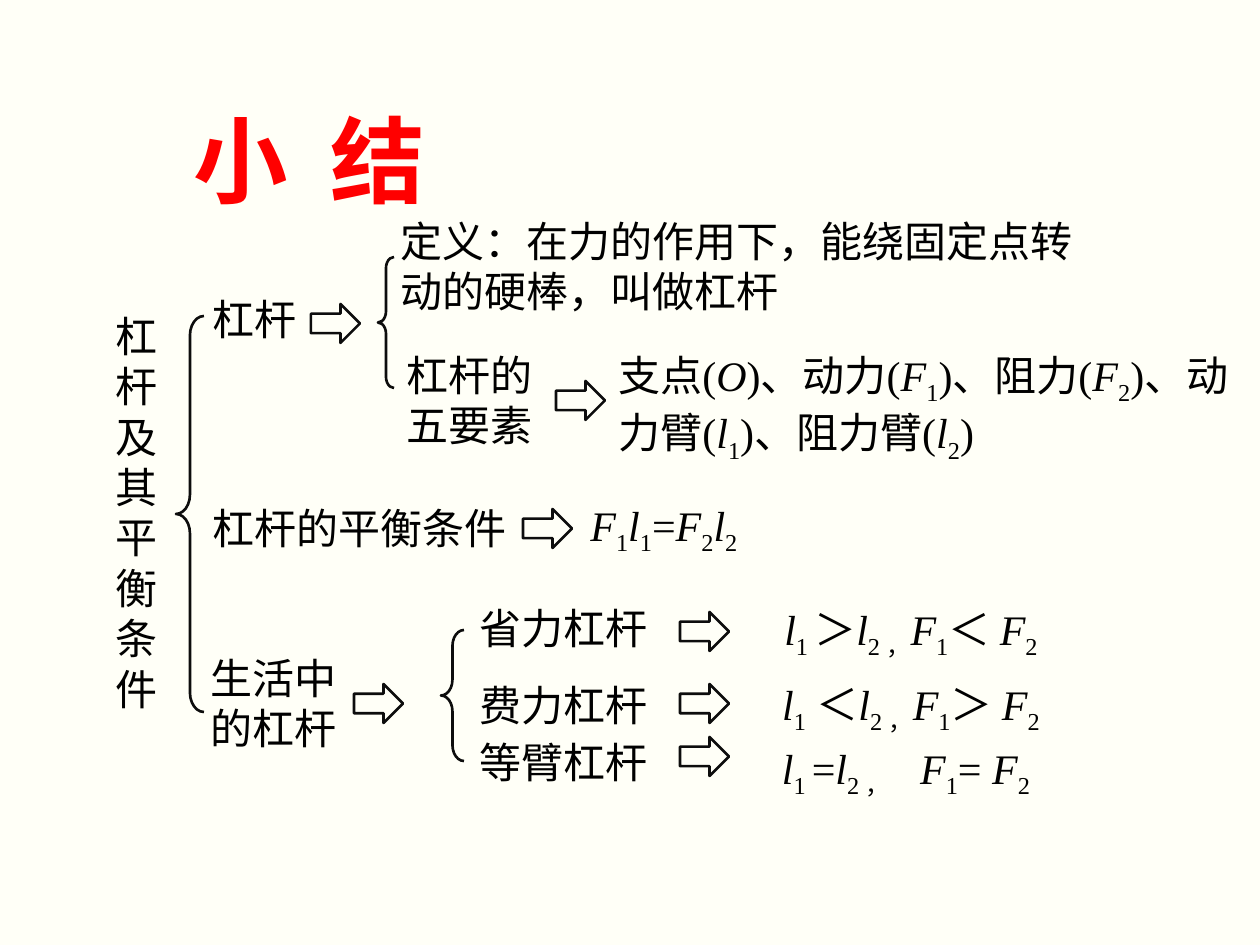
"""Build the summary slide on levers and their balance condition."""
from dataclasses import dataclass

from lxml.etree import SubElement
from pptx import Presentation
from pptx.dml.color import RGBColor
from pptx.enum.shapes import MSO_SHAPE
from pptx.enum.text import MSO_ANCHOR, PP_ALIGN
from pptx.oxml.ns import qn
from pptx.util import Emu, Pt


@dataclass(frozen=True)
class Theme:
    background: RGBColor = RGBColor(0xFF, 0xFF, 0xF7)
    text: RGBColor = RGBColor(0, 0, 0)
    outline: RGBColor = RGBColor(0x0D, 0x0D, 0x0D)
    title: RGBColor = RGBColor(0xFF, 0, 0)
    latin_font: str = "Times New Roman"
    title_font: str = "Noto Sans CJK JP"
    body_size: Pt = Pt(24)
    title_size: Pt = Pt(54)
    outline_width: Pt = Pt(1.5)


THEME = Theme()
PX = 914400 / 126
MARKS = "/_~"


def place(*lengths):
    return [Emu(round(length * PX)) for length in lengths]


def write(paragraph, marked_text, font_name, size, color, bold=False):
    """Add runs split at |, where / is italic, _ is subscript and ~ is a wide gap."""
    for piece in marked_text.split("|"):
        run = paragraph.add_run()
        run.text = piece.lstrip(MARKS)
        run.font.name = font_name
        run.font.size = size
        run.font.bold = bold
        run.font.italic = piece.startswith("/")
        run.font.color.rgb = color
        properties = run._r.get_or_add_rPr()
        if piece.startswith("_"):
            properties.set("baseline", "-25000")
        if piece.startswith("~"):
            properties.set("spc", "1200")
        if font_name == THEME.title_font:
            SubElement(properties, qn("a:ea")).set("typeface", font_name)


presentation = Presentation()
presentation.slide_width, presentation.slide_height = place(1260, 945)
slide = presentation.slides.add_slide(presentation.slide_layouts[5])
slide.background.fill.solid()
slide.background.fill.fore_color.rgb = THEME.background

title = slide.shapes.title
title.left, title.top, title.width, title.height = place(181, 95, 469, 127)
title.text_frame.vertical_anchor = MSO_ANCHOR.MIDDLE
title_paragraph = title.text_frame.paragraphs[0]
title_paragraph.alignment = PP_ALIGN.LEFT
write(title_paragraph, "小|~ |结", THEME.title_font, THEME.title_size, THEME.title, True)

LEFT, CENTER = PP_ALIGN.LEFT, PP_ALIGN.CENTER
texts = [
    (103, 304, 88, 420, LEFT, "杠杆及其平衡条件"),
    (200, 287, 155, 63, LEFT, "杠杆"),
    (388, 209, 703, 115, LEFT, "定义：在力的作用下，能绕固定点转动的硬棒，叫做杠杆"),
    (394, 343, 155, 115, LEFT, "杠杆的五要素"),
    (606, 343, 636, 115, LEFT,
     "支点(|/O|)、动力(|/F|_1|)、阻力(|/F|_2|)、动力臂(|/l|_1|)、阻力臂(|/l|_2|)"),
    (200, 496, 408, 63, LEFT, "杠杆的平衡条件"),
    (578, 493, 188, 63, LEFT, "/F|_1|/l|_1|=|/F|_2|/l|_2"),
    (198, 646, 173, 115, LEFT, "生活中的杠杆"),
    (467, 596, 210, 63, LEFT, "省力杠杆"),
    (467, 673, 210, 63, LEFT, "费力杠杆"),
    (467, 730, 210, 63, LEFT, "等臂杠杆"),
    (736, 597, 350, 63, CENTER, "/l|_1 |＞|/l|_2 ，|/F|_1|＜ |/F|_2"),
    (736, 672, 350, 63, CENTER, "/l|_1| ＜|/l|_2 ，|/F|_1|＞ |/F|_2"),
    (731, 736, 350, 63, CENTER, "/l|_1 |=|/l|_2 ，|~ |/F|_1|= |/F|_2"),
]
for left, top, width, height, alignment, marked_text in texts:
    text_box = slide.shapes.add_textbox(*place(left, top, width, height))
    text_box.text_frame.word_wrap = True
    paragraph = text_box.text_frame.paragraphs[0]
    paragraph.alignment = alignment
    write(paragraph, marked_text, THEME.latin_font, THEME.body_size, THEME.text)

arrows = [(311, 304), (556, 381), (523, 509), (354, 684),
          (680, 612), (680, 684), (680, 737)]
braces = [(176, 316, 28, 396), (378, 257, 16, 131), (441, 630, 23, 131)]
outlines = [(MSO_SHAPE.RIGHT_ARROW, (left, top, 49, 39)) for left, top in arrows]
outlines += [(MSO_SHAPE.LEFT_BRACE, box) for box in braces]
for kind, box in outlines:
    shape = slide.shapes.add_shape(kind, *place(*box))
    shape.shadow.inherit = False
    shape.fill.background()
    shape.line.color.rgb = THEME.outline
    shape.line.width = THEME.outline_width
    if kind == MSO_SHAPE.LEFT_BRACE:
        shape.adjustments[0] = 0.69

presentation.save("out.pptx")
